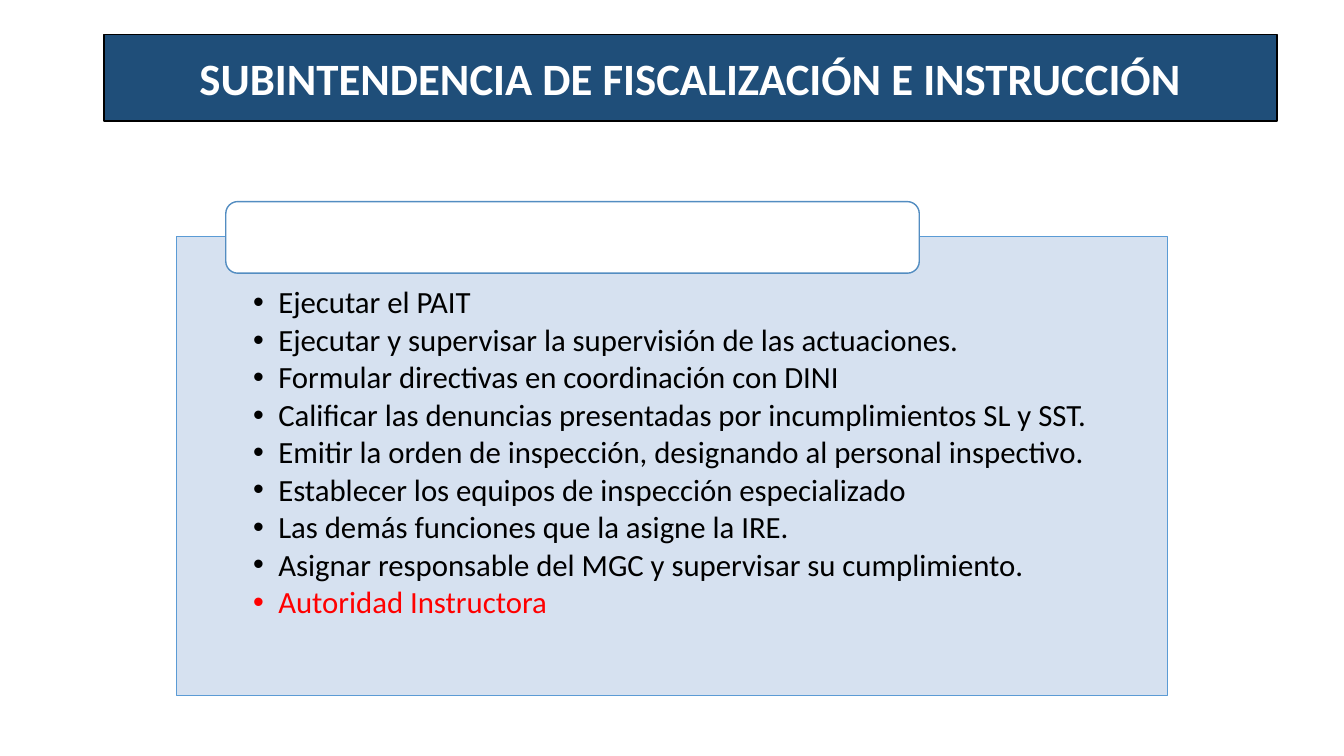
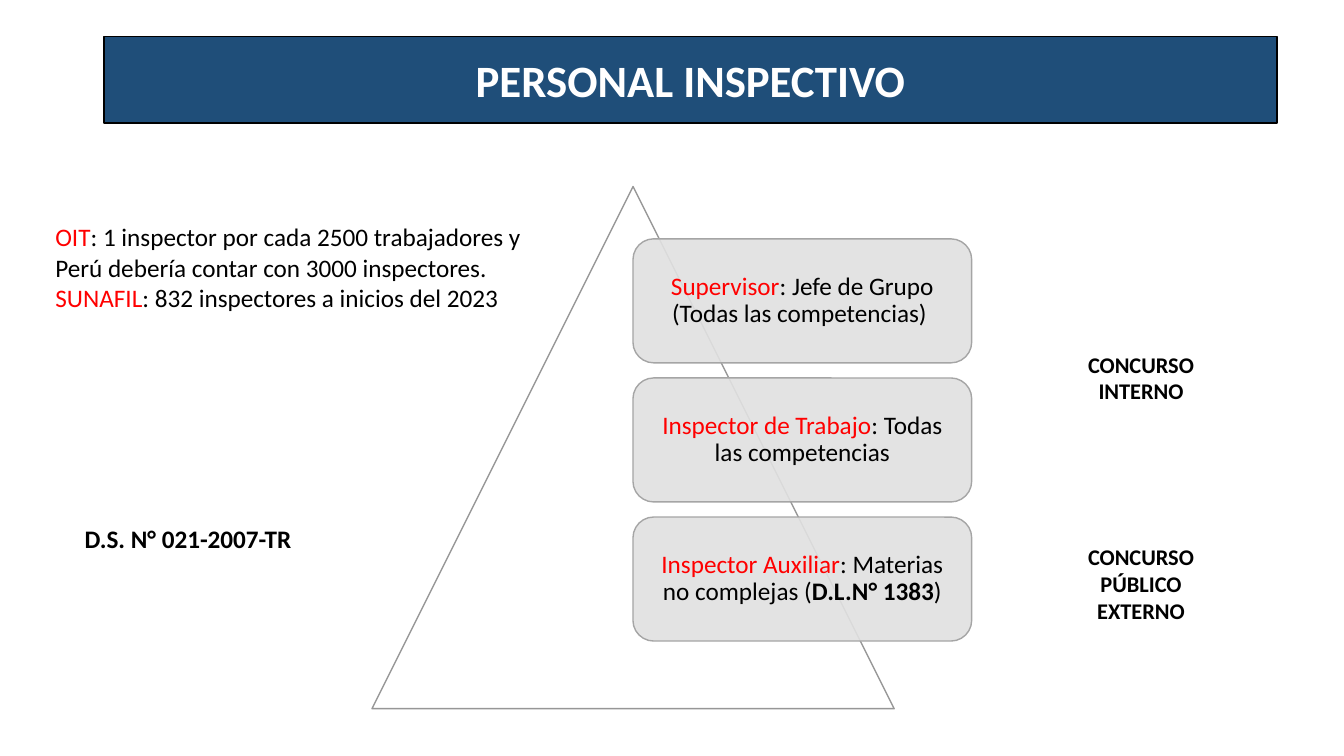
from dataclasses import dataclass
from lxml.etree import SubElement
from pptx import Presentation
from pptx.dml.color import RGBColor
from pptx.enum.shapes import MSO_SHAPE
from pptx.enum.text import MSO_ANCHOR, MSO_AUTO_SIZE, PP_ALIGN
from pptx.oxml.ns import qn
from pptx.util import Emu, Inches, Pt

WIDE, HIGH = Inches(13.333), Inches(7.5)
FONT = "Calibri"
HUES = {
    "navy": "1F4E79", "white": "FFFFFF", "black": "000000", "red": "FF0000",
    "pale": "D2DEEF", "blue": "5B9BD5", "steel": "538DC1",
    "mist": "E1E1E1", "ash": "A5A5A5", "gray": "969696",
}


@dataclass(frozen=True)
class Box:
    """Shares of the slide's width and height, in percent."""
    left: float
    top: float
    width: float
    height: float

    def place(self) -> tuple[Emu, Emu, Emu, Emu]:
        return (Emu(round(WIDE * self.left / 100)), Emu(round(HIGH * self.top / 100)),
                Emu(round(WIDE * self.width / 100)), Emu(round(HIGH * self.height / 100)))


@dataclass(frozen=True)
class Span:
    text: str
    hue: str = "black"
    bold: bool = False


@dataclass(frozen=True)
class Label:
    box: Box
    lines: tuple[tuple[Span, ...], ...]
    size: int = 18
    align: PP_ALIGN = PP_ALIGN.LEFT


DUTIES = (
    "Ejecutar el PAIT",
    "Ejecutar y supervisar la supervisión de las actuaciones.",
    "Formular directivas en coordinación con DINI",
    "Calificar las denuncias presentadas por incumplimientos SL y SST.",
    "Emitir la orden de inspección, designando al personal inspectivo.",
    "Establecer los equipos de inspección especializado",
    "Las demás funciones que la asigne la IRE.",
    "Asignar responsable del MGC y supervisar su cumplimiento.",
)
RANKS = (
    (Span("Supervisor", "red"), Span(": Jefe de Grupo (Todas las competencias) ")),
    (Span("Inspector de Trabajo", "red"), Span(": Todas las competencias")),
    (Span("Inspector Auxiliar", "red"), Span(": Materias no complejas ("),
     Span("D.L.N° 1383", bold=True), Span(")")),
)
LABELS = (
    Label(Box(3.38, 28.67, 38.7, 13.47), (
        (Span("OIT", "red"),
         Span(": 1 inspector por cada 2500 trabajadores y Perú debería contar con 3000 inspectores.")),
        (Span("SUNAFIL", "red"), Span(": 832 inspectores a inicios del 2023")),
    )),
    Label(Box(5.55, 68.53, 19.05, 5.33), ((Span("D.S. N° 021-2007-TR", bold=True),),)),
    Label(Box(78.9, 45.73, 12, 8.53), ((Span("CONCURSO INTERNO", bold=True),),),
          16, PP_ALIGN.CENTER),
    Label(Box(78.9, 71.2, 12, 12.13),
          ((Span("CONCURSO PÚBLICO", bold=True),), (Span("EXTERNO", bold=True),)),
          16, PP_ALIGN.CENTER),
)


def color(name: str) -> RGBColor:
    return RGBColor.from_string(HUES[name])


def draw(slide, kind: MSO_SHAPE, box: Box, fill: str, line: str, alpha: int = 100):
    shape = slide.shapes.add_shape(kind, *box.place())
    shape.shadow.inherit = False
    shape.fill.solid()
    shape.fill.fore_color.rgb = color(fill)
    shape.line.color.rgb = color(line)
    shape.line.width = Pt(1)
    if alpha < 100:
        tint = shape.element.spPr.find(qn("a:solidFill")).find(qn("a:srgbClr"))
        SubElement(tint, qn("a:alpha"), val=str(alpha * 1000))
    return shape


def write(shape, lines, *, size: int = 18, align: PP_ALIGN = PP_ALIGN.CENTER,
          anchor: MSO_ANCHOR = MSO_ANCHOR.MIDDLE, pad=(0.1, 0.05, 0.1, 0.05),
          lead: float = 1.0, after: float = 0, dots: bool = False) -> None:
    frame = shape.text_frame
    frame.word_wrap = True
    frame.vertical_anchor = anchor
    (frame.margin_left, frame.margin_top,
     frame.margin_right, frame.margin_bottom) = map(Inches, pad)
    for index, spans in enumerate(lines):
        para = frame.add_paragraph() if index else frame.paragraphs[0]
        para.alignment = align
        para.line_spacing = lead
        para.space_after = Pt(after)
        if dots:
            props = para._p.get_or_add_pPr()
            props.set("marL", str(Inches(0.25)))
            props.set("indent", str(-Inches(0.25)))
            SubElement(props, qn("a:buFont"), typeface="Arial")
            SubElement(props, qn("a:buChar"), char="•")
        for span in spans:
            run = para.add_run()
            run.text = span.text
            run.font.name = FONT
            run.font.size = Pt(size)
            run.font.bold = span.bold
            run.font.color.rgb = color(span.hue)


def title(slide, text: str, top: float) -> None:
    band = draw(slide, MSO_SHAPE.RECTANGLE, Box(7.73, top, 87.3, 11.47), "navy", "black")
    write(band, [(Span(text, "white", True),)], size=32)


def label(slide, item: Label) -> None:
    shape = slide.shapes.add_textbox(*item.box.place())
    write(shape, item.lines, size=item.size, align=item.align, anchor=MSO_ANCHOR.TOP)
    shape.text_frame.auto_size = MSO_AUTO_SIZE.SHAPE_TO_FIT_TEXT


def office(slide) -> None:
    panel = draw(slide, MSO_SHAPE.RECTANGLE, Box(13.13, 31.33, 73.73, 60.67),
                 "pale", "blue", 90)
    lines = [(Span(text),) for text in DUTIES] + [(Span("Autoridad Instructora", "red"),)]
    write(panel, lines, size=22, align=PP_ALIGN.LEFT, anchor=MSO_ANCHOR.TOP,
          pad=(0.76, 0.5, 0.76, 0.17), lead=0.9, after=3, dots=True)
    draw(slide, MSO_SHAPE.ROUNDED_RECTANGLE, Box(16.8, 26.67, 51.6, 9.47), "white", "steel")
    title(slide, "SUBINTENDENCIA DE FISCALIZACIÓN E INSTRUCCIÓN", 4.53)


def staff(slide) -> None:
    draw(slide, MSO_SHAPE.ISOSCELES_TRIANGLE, Box(27.68, 24.67, 38.85, 69.07), "white", "gray")
    for row, spans in enumerate(RANKS):
        card = draw(slide, MSO_SHAPE.ROUNDED_RECTANGLE,
                    Box(47.1, 31.6 + row * 18.4, 25.2, 16.4), "mist", "ash", 90)
        write(card, [spans], pad=(0.07,) * 4, lead=0.9)
    for item in LABELS:
        label(slide, item)
    title(slide, "PERSONAL INSPECTIVO", 4.8)


def main() -> None:
    deck = Presentation()
    deck.slide_width, deck.slide_height = WIDE, HIGH
    for build in (office, staff):
        build(deck.slides.add_slide(deck.slide_layouts[6]))
    deck.save("out.pptx")


if __name__ == "__main__":
    main()
